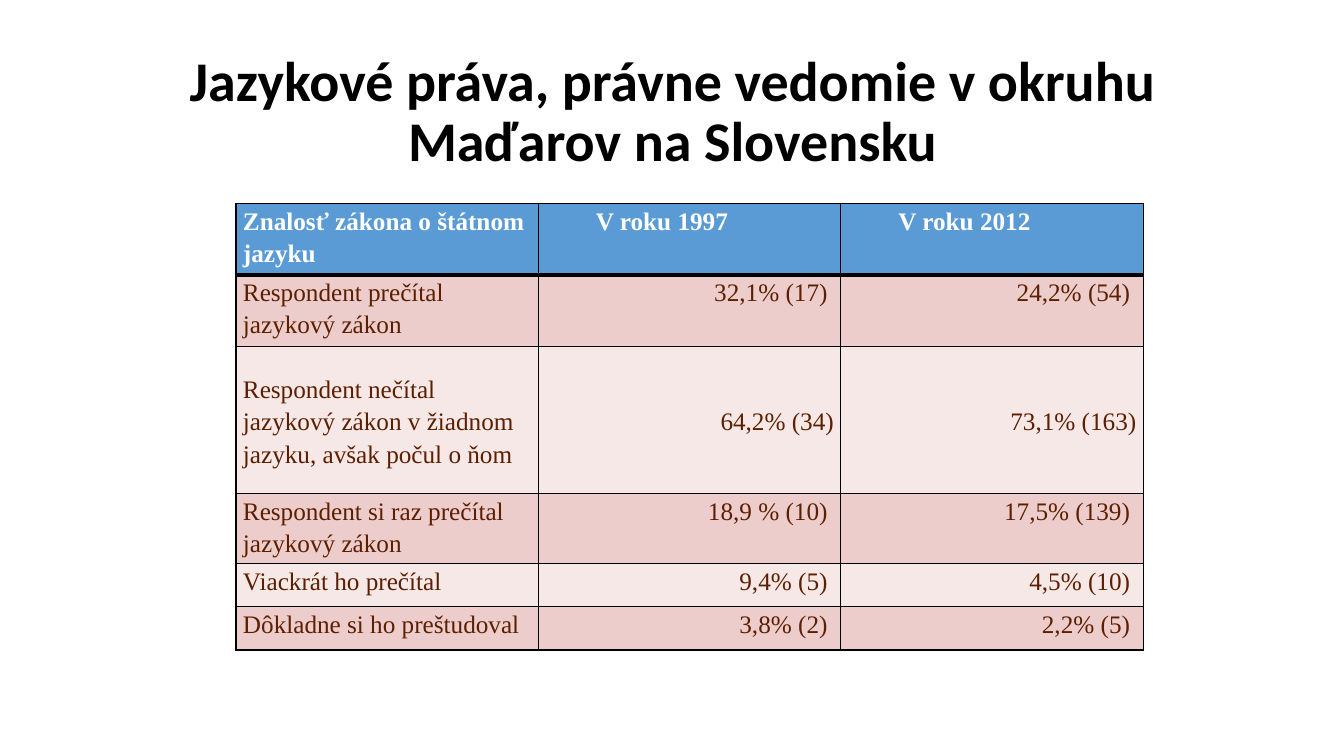
from lxml import etree
from pptx import Presentation
from pptx.dml.color import RGBColor
from pptx.enum.text import MSO_ANCHOR, PP_ALIGN
from pptx.oxml.ns import qn
from pptx.util import Inches, Pt

LEFT, CENTER, RIGHT = PP_ALIGN.LEFT, PP_ALIGN.CENTER, PP_ALIGN.RIGHT
TOP, MIDDLE = MSO_ANCHOR.TOP, MSO_ANCHOR.MIDDLE
TITLE_ONLY = 5

TITLE = "Jazykové práva, právne vedomie v okruhu Maďarov na Slovensku"
ROWS = [
    ("Znalosť zákona o štátnom jazyku", "V roku 1997", "V roku 2012"),
    ("Respondent prečítal jazykový zákon", "32,1% (17) ", "24,2% (54) "),
    ("Respondent nečítal jazykový zákon v žiadnom jazyku, avšak počul o ňom",
     "64,2% (34)", "73,1% (163)"),
    ("Respondent si raz prečítal jazykový zákon", "18,9 % (10) ", "17,5% (139) "),
    ("Viackrát ho prečítal", "9,4% (5) ", "4,5% (10) "),
    ("Dôkladne si ho preštudoval", "3,8% (2) ", "2,2% (5) "),
]
ROW_HEIGHTS = [0.71, 0.71, 1.46, 0.69, 0.43, 0.43]
TALL_ROW = 2
HEADER_FILL = "5B9BD5"
BAND_FILLS = ["F6E8E7", "ECCDCB"]


def color(value):
    return RGBColor.from_string(value)


def style_font(font, name, size, value, bold):
    font.name = name
    font.size = Pt(size)
    font.color.rgb = color(value)
    font.bold = bold


def set_borders(cell, widths, value="000000"):
    properties = cell._tc.get_or_add_tcPr()
    for index, (side, width) in enumerate(widths.items()):
        line = etree.Element(qn(f"a:ln{side}"), w=str(Pt(width)))
        fill = etree.SubElement(line, qn("a:solidFill"))
        etree.SubElement(fill, qn("a:srgbClr"), val=value)
        properties.insert(index, line)


def add_title(slide, left, top, width, height):
    title = slide.shapes.title
    title.left, title.top = Inches(left), Inches(top)
    title.width, title.height = Inches(width), Inches(height)
    frame = title.text_frame
    frame.text = TITLE
    frame.vertical_anchor = MIDDLE
    paragraph = frame.paragraphs[0]
    paragraph.alignment = CENTER
    paragraph.line_spacing = 0.9
    style_font(paragraph.font, "Calibri", 40, "000000", True)


def fill_cell(cell, text, row, column):
    header = row == 0
    cell.text = text
    cell.margin_left = cell.margin_right = Inches(0.07)
    cell.margin_top = cell.margin_bottom = 0
    cell.vertical_anchor = MIDDLE if row == TALL_ROW else TOP
    cell.fill.solid()
    cell.fill.fore_color.rgb = color(HEADER_FILL if header else BAND_FILLS[row % 2])
    set_borders(cell, {"L": 1, "R": 1, "T": 3 if row == 1 else 1, "B": 3 if header else 1})
    paragraph = cell.text_frame.paragraphs[0]
    paragraph.line_spacing = 1.15
    paragraph.alignment = RIGHT if column and not header else LEFT
    if column:
        paragraph._p.get_or_add_pPr().set("indent", str(Inches(0.5)))
    style_font(paragraph.font, "Times New Roman", 18, "FFFFFF" if header else "5C1F00", header)


def add_survey_table(slide, left, top, width, height):
    frame = slide.shapes.add_table(
        len(ROWS), len(ROWS[0]), Inches(left), Inches(top), Inches(width), Inches(height))
    table = frame.table
    for table_column in table.columns:
        table_column.width = Inches(width / len(ROWS[0]))
    for row, texts in enumerate(ROWS):
        table.rows[row].height = Inches(ROW_HEIGHTS[row])
        for column, text in enumerate(texts):
            fill_cell(table.cell(row, column), text, row, column)


def main():
    presentation = Presentation()
    presentation.slide_width, presentation.slide_height = Inches(13.33), Inches(7.5)
    slide = presentation.slides.add_slide(presentation.slide_layouts[TITLE_ONLY])
    add_title(slide, 0.92, 0.4, 11.5, 1.45)
    add_survey_table(slide, 2.34, 2.02, 9, sum(ROW_HEIGHTS))
    presentation.save("out.pptx")


if __name__ == "__main__":
    main()
